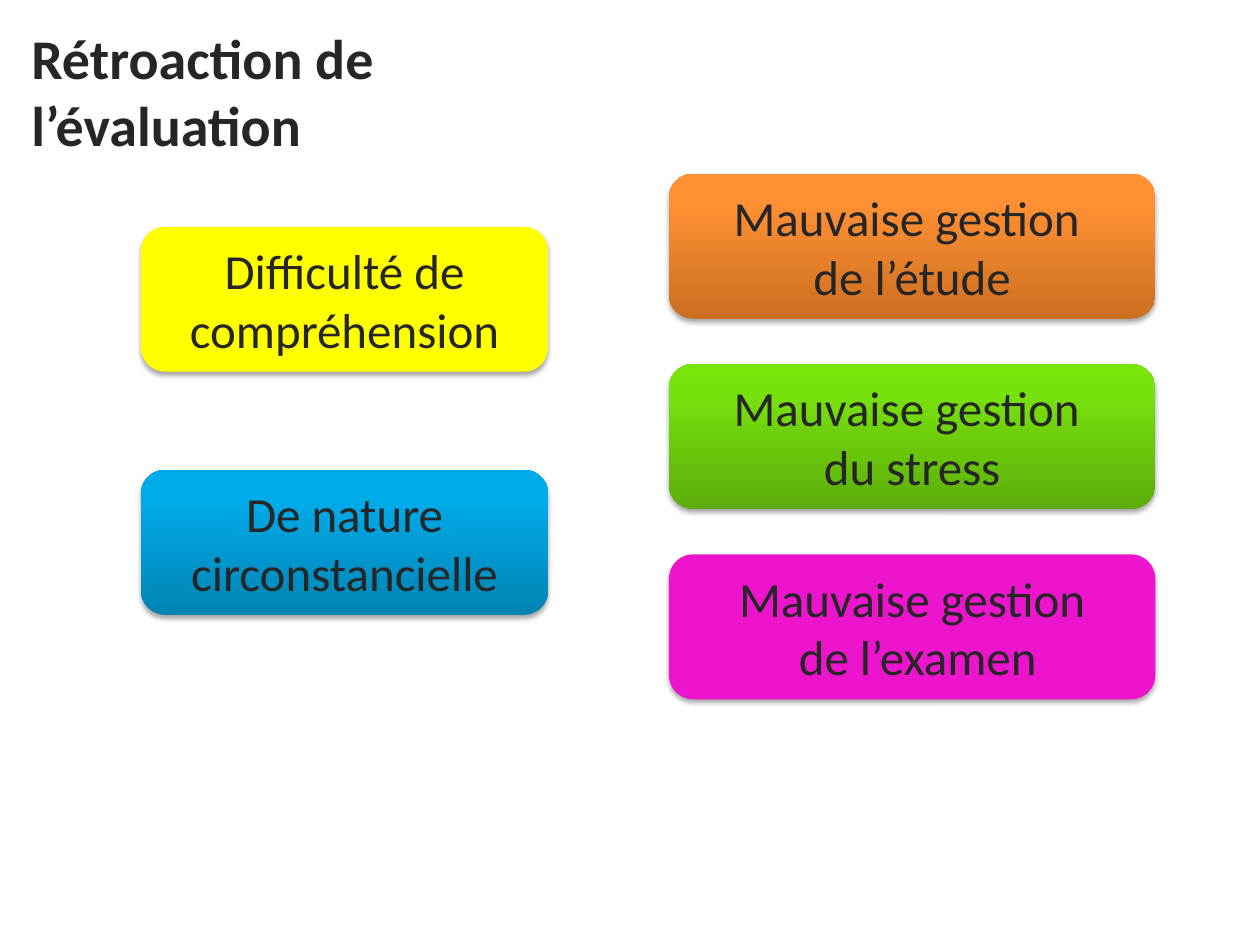
from copy import deepcopy
from dataclasses import dataclass

from lxml import etree
from pptx import Presentation
from pptx.dml.color import RGBColor
from pptx.enum.shapes import MSO_SHAPE
from pptx.enum.text import MSO_ANCHOR, MSO_AUTO_SIZE, PP_ALIGN
from pptx.oxml.ns import qn
from pptx.util import Inches, Pt

ROUNDED = MSO_SHAPE.ROUNDED_RECTANGLE
MIDDLE = MSO_ANCHOR.MIDDLE
CENTER = PP_ALIGN.CENTER
GROW = MSO_AUTO_SIZE.SHAPE_TO_FIT_TEXT


@dataclass(frozen=True)
class Theme:
    font: str = "Calibri"
    ink: str = "262626"
    title_size: int = 32
    card_size: int = 28
    yellow: tuple = ("FFFF00",)
    blue: tuple = ("0083B3", "00ABE9", "00ABEA")
    orange: tuple = ("CC6E20", "FF9034", "FF9136")
    green: tuple = ("5CAD0A", "77E10D", "78E609")
    pink: tuple = ("EC14CD",)
    stops: tuple = (0, 0.8, 1)
    shadow: str = "000000"


THEME = Theme()
WIDTH, HEIGHT = 10, 7.5
CARD_H = 1.15

TITLE = "Rétroaction de l’évaluation"
COLUMNS = [
    {"left": 1.12, "top": 1.8, "width": 3.23, "pitch": 1.93, "cards": [
        ([["Difficulté de"], ["compréhension"]], THEME.yellow),
        ([["De nature"], ["circonstancielle"]], THEME.blue),
    ]},
    {"left": 5.31, "top": 1.38, "width": 3.86, "pitch": 1.51, "cards": [
        ([["Mauvaise gestion ", "de l’étude"]], THEME.orange),
        ([["Mauvaise gestion ", "du stress"]], THEME.green),
        ([["Mauvaise gestion", " de l’examen"]], THEME.pink),
    ]},
]


def add_run(p, text, size, bold=False):
    r = p.add_run()
    r.text = text
    r.font.name = THEME.font
    r.font.size = Pt(size)
    r.font.bold = bold
    r.font.color.rgb = RGBColor.from_string(THEME.ink)


def paint(sp, colors):
    if len(colors) == 1:
        sp.fill.solid()
        sp.fill.fore_color.rgb = RGBColor.from_string(colors[0])
        return
    sp.fill.gradient()
    sp.fill.gradient_angle = 90
    stop_list = sp.element.spPr.find(".//" + qn("a:gsLst"))
    stop_list.append(deepcopy(stop_list[-1]))
    for stop, color, position in zip(sp.fill.gradient_stops, colors, THEME.stops):
        stop.color.rgb = RGBColor.from_string(color)
        stop.position = position


def add_shadow(sp):
    sp.shadow.inherit = False
    effects = sp.element.spPr.find(qn("a:effectLst"))
    outer = etree.SubElement(effects, qn("a:outerShdw"), blurRad=str(Pt(3.1)),
                             dist=str(Pt(1.8)), dir="5400000", rotWithShape="0")
    color = etree.SubElement(outer, qn("a:srgbClr"), val=THEME.shadow)
    etree.SubElement(color, qn("a:alpha"), val="35000")


def add_card(slide, left, top, width, paragraphs, colors):
    sp = slide.shapes.add_shape(ROUNDED, Inches(left), Inches(top),
                                Inches(width), Inches(CARD_H))
    paint(sp, colors)
    sp.line.fill.background()
    add_shadow(sp)
    tf = sp.text_frame
    tf.word_wrap = True
    tf.auto_size = GROW
    tf.vertical_anchor = MIDDLE
    for i, lines in enumerate(paragraphs):
        p = tf.add_paragraph() if i else tf.paragraphs[0]
        p.alignment = CENTER
        for j, line in enumerate(lines):
            if j:
                p.add_line_break()
            add_run(p, line, THEME.card_size)


def main():
    prs = Presentation()
    prs.slide_width, prs.slide_height = Inches(WIDTH), Inches(HEIGHT)
    slide = prs.slides.add_slide(prs.slide_layouts[6])

    title = slide.shapes.add_textbox(Inches(0.15), Inches(0.29), Inches(5.05), Inches(0.86))
    tf = title.text_frame
    tf.word_wrap = True
    tf.vertical_anchor = MIDDLE
    add_run(tf.paragraphs[0], TITLE, THEME.title_size, bold=True)

    for column in COLUMNS:
        for row, (paragraphs, colors) in enumerate(column["cards"]):
            top = column["top"] + row * column["pitch"]
            add_card(slide, column["left"], top, column["width"], paragraphs, colors)

    prs.save("out.pptx")


if __name__ == "__main__":
    main()
